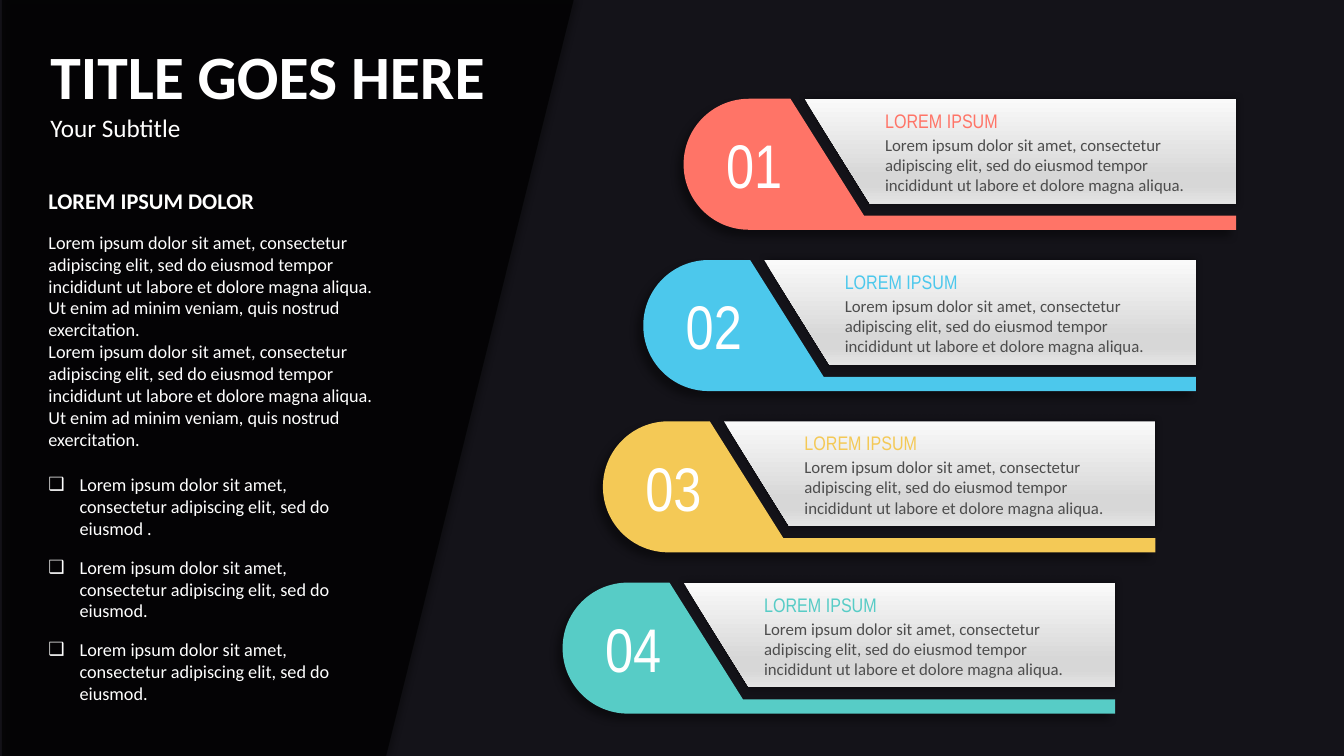
from lxml import etree
from pptx import Presentation
from pptx.dml.color import RGBColor
from pptx.enum.shapes import MSO_SHAPE
from pptx.enum.text import MSO_ANCHOR, MSO_AUTO_SIZE, PP_ALIGN
from pptx.oxml.ns import qn
from pptx.util import Pt

RECT = MSO_SHAPE.RECTANGLE
TOP, NO_FIT = MSO_ANCHOR.TOP, MSO_AUTO_SIZE.NONE
LEFT, CENTER = PP_ALIGN.LEFT, PP_ALIGN.CENTER
PX = 9144  # 100 px to the inch

# Content
TITLE, SUBTITLE = "TITLE GOES HERE", "Your Subtitle"
HEADING = "LOREM IPSUM DOLOR"
LOREM = ("Lorem ipsum dolor sit amet, consectetur adipiscing elit, sed do eiusmod "
         "tempor incididunt ut labore et dolore magna aliqua.")
BODY = LOREM + " Ut enim ad minim veniam, quis nostrud exercitation."
BULLET = "Lorem ipsum dolor sit amet, consectetur adipiscing elit, sed do eiusmod"
BULLETS = [BULLET + " .", BULLET + ".", BULLET + "."]
CARDS = [("01", "LOREM IPSUM", LOREM, "FF7467"),
         ("02", "LOREM IPSUM", LOREM, "4CC8EC"),
         ("03", "LOREM IPSUM", LOREM, "F4C956"),
         ("04", "LOREM IPSUM", LOREM, "57CCC6")]
WHITE, BLACK, GREY = "FFFFFF", "000000", "4D4D4D"
PLATE_STOPS = [(0, "FAFAFA"), (74, "D7D7D7"), (83, "D7D7D7"), (100, "E4E4E4")]

# Formats
SANS = dict(name="Calibri", bold=False)
NARROW = dict(name="Arial Narrow", bold=False)

# Layout
SLIDE_W, SLIDE_H = 1333, 750
CARD_X, CARD_Y, STEP_X, STEP_Y = 678, 98, -40, 160
CARD_W, CARD_H, RADIUS = 548, 130, 65
BULLET_INDENT = 31

# Outlines inside a card; the tab closes with two quarter curves
TAB = [(RADIUS, 0), (106, 0), (179, 116), (CARD_W, 116), (CARD_W, CARD_H),
       (RADIUS, CARD_H), (0, RADIUS)]
TAB_CURVES = [[(29, CARD_H), (0, 101), (0, RADIUS)],
              [(0, 29), (29, 0), (RADIUS, 0)]]
PLATE = [(120, 0), (CARD_W, 0), (CARD_W, 104), (185, 104)]


def rgb(color):
    return RGBColor.from_string(color)


def sub(parent, tag, **attrs):
    return etree.SubElement(parent, qn(tag), {k: str(v) for k, v in attrs.items()})


def paint(shape, color, opacity=100):
    shape.fill.solid()
    shape.fill.fore_color.rgb = rgb(color)
    if opacity < 100:
        clr = next(shape._element.spPr.iter(qn("a:srgbClr")))
        sub(clr, "a:alpha", val=opacity * 1000)


def paint_gradient(shape, stops):
    grad = sub(shape._element.spPr, "a:gradFill", rotWithShape=1)
    gs_list = sub(grad, "a:gsLst")
    for pos, color in stops:
        sub(sub(gs_list, "a:gs", pos=pos * 1000), "a:srgbClr", val=color)
    sub(grad, "a:lin", ang=90 * 60000, scaled=0)


def finish(shape, shadow=None):
    """Remove the outline; shadow is (blur pt, distance pt, angle)."""
    shape.line.fill.background()
    shape.shadow.inherit = False
    if shadow:
        blur, dist, angle = shadow
        effects = shape._element.spPr.find(qn("a:effectLst"))
        outer = sub(effects, "a:outerShdw", blurRad=Pt(blur), dist=Pt(dist),
                    dir=angle * 60000, rotWithShape=0)
        sub(sub(outer, "a:srgbClr", val=BLACK), "a:alpha", val=40000)


def outline(points, x=0, y=0):
    first, *rest = [((x + dx) * PX, (y + dy) * PX) for dx, dy in points]
    builder = s.shapes.build_freeform(*first)
    builder.add_line_segments(rest, close=True)
    return builder.convert_to_shape()


def round_off(shape, curves):
    """Replace the last straight segment by cubic curves."""
    outline_path = next(shape._element.spPr.iter(qn("a:path")))
    outline_path.remove(outline_path.findall(qn("a:lnTo"))[-1])
    close = outline_path.find(qn("a:close"))
    for curve in curves:
        bezier = sub(outline_path, "a:cubicBezTo")
        for dx, dy in curve:
            sub(bezier, "a:pt", x=dx * PX, y=dy * PX)
    outline_path.append(close)


def place(shape, x, y, w, h):
    shape.left, shape.top, shape.width, shape.height = (v * PX for v in (x, y, w, h))
    tf = shape.text_frame
    tf.word_wrap, tf.auto_size, tf.vertical_anchor = True, NO_FIT, TOP
    return tf


def write(tf, text, size, color, font, before=0, align=LEFT, bullet=None):
    first = not tf.paragraphs[0].runs
    p = tf.paragraphs[0] if first else tf.add_paragraph()
    indent = BULLET_INDENT * PX if bullet else 0
    pPr = p._p.get_or_add_pPr()
    pPr.set("marL", str(indent))
    pPr.set("indent", str(-indent))
    if bullet:
        sub(pPr, "a:buChar", char=bullet)
    else:
        sub(pPr, "a:buNone")
    p.alignment, p.space_before = align, Pt(before)
    r = p.add_run()
    r.text = text
    r.font.size, r.font.color.rgb = Pt(size), rgb(color)
    for key, value in font.items():
        setattr(r.font, key, value)


prs = Presentation()
prs.slide_width, prs.slide_height = SLIDE_W * PX, SLIDE_H * PX
s = prs.slides.add_slide(prs.slide_layouts[1])
s.background.fill.solid()
s.background.fill.fore_color.rgb = rgb("524E67")
title, body = s.placeholders

# Dark overlay and slanted left panel
overlay = s.shapes.add_shape(RECT, 0, 0, prs.slide_width, prs.slide_height)
paint(overlay, BLACK, 75)
finish(overlay)
panel = outline([(2, 0), (569, 0), (383, SLIDE_H), (2, SLIDE_H)])
paint(panel, BLACK, 70)
finish(panel, (4, 3, 0))

# Left column text, brought in front of the panel
for holder in (body, title):
    s.shapes._spTree.append(holder._element)
tf = place(body, 38, 181, 345, 527)
write(tf, HEADING, 16, WHITE, SANS | {"bold": True})
write(tf, BODY, 13, WHITE, SANS, before=12)
write(tf, BODY, 13, WHITE, SANS)
for i, item in enumerate(BULLETS):
    write(tf, item, 13, WHITE, SANS, before=12 if i else 17, bullet="❑")
tf = place(title, 40, 33, 650, 114)
write(tf, TITLE, 44, WHITE, SANS | {"bold": True})
write(tf, SUBTITLE, 18, WHITE, SANS)

# Numbered cards: a coloured tab and a light plate, each grouped with its text
for i, (number, heading, text, color) in enumerate(CARDS):
    x, y = CARD_X + i * STEP_X, CARD_Y + i * STEP_Y
    tab = outline(TAB, x, y)
    round_off(tab, TAB_CURVES)
    paint(tab, color)
    finish(tab, (6, 6, 135))
    label = s.shapes.add_textbox(0, 0, 0, 0)
    tf = place(label, x + 29, y + 23, 82, 84)
    write(tf, number, 44, WHITE, NARROW, align=CENTER)
    s.shapes.add_group_shape([tab, label])

    plate = outline(PLATE, x, y)
    paint_gradient(plate, PLATE_STOPS)
    finish(plate, (5, 0, 0))
    caption = s.shapes.add_textbox(0, 0, 0, 0)
    tf = place(caption, x + 190, y + 5, 349, 96)
    write(tf, heading, 14, color, NARROW)
    write(tf, text, 12, GREY, SANS, before=1.5)
    s.shapes.add_group_shape([plate, caption])

prs.save("out.pptx")
